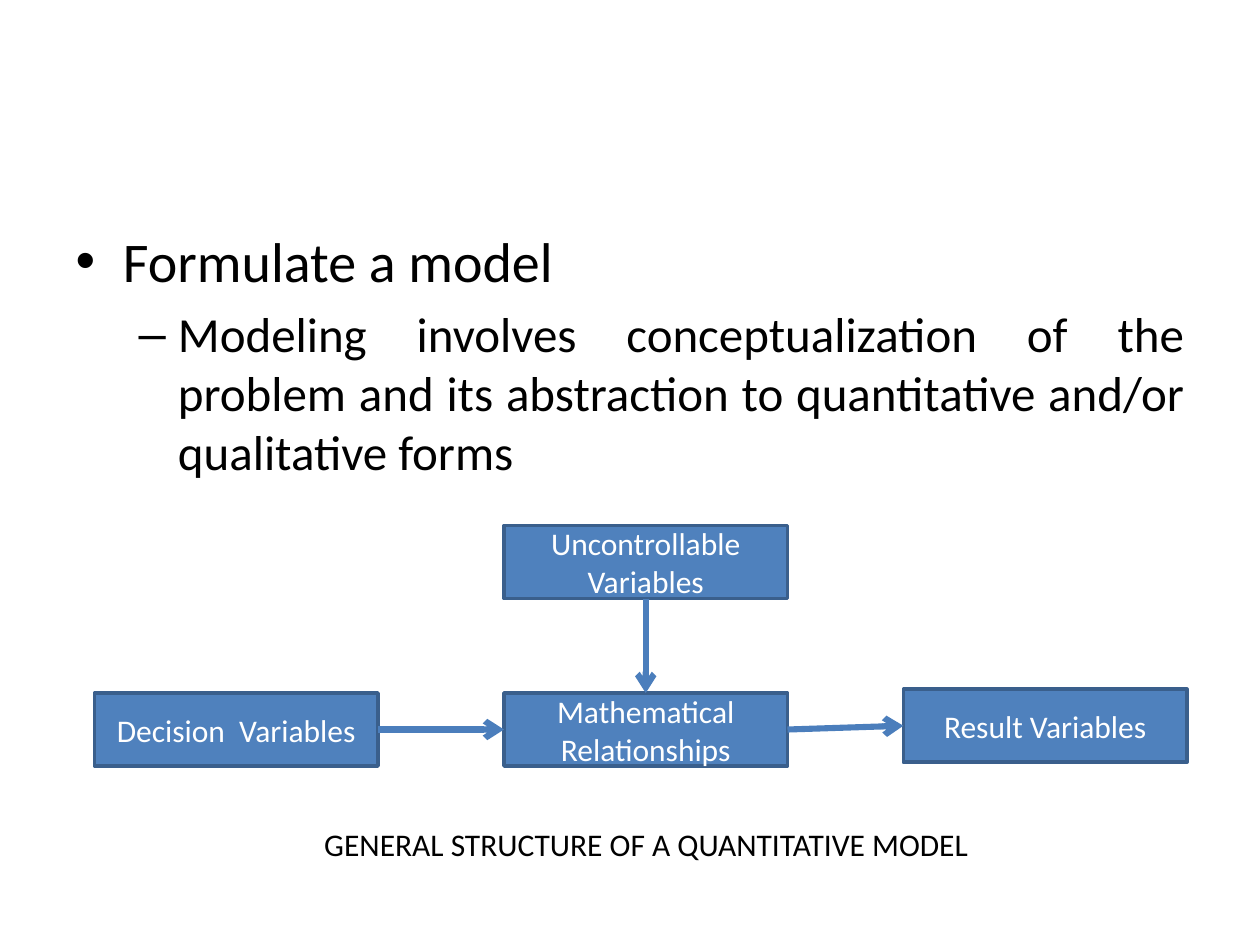
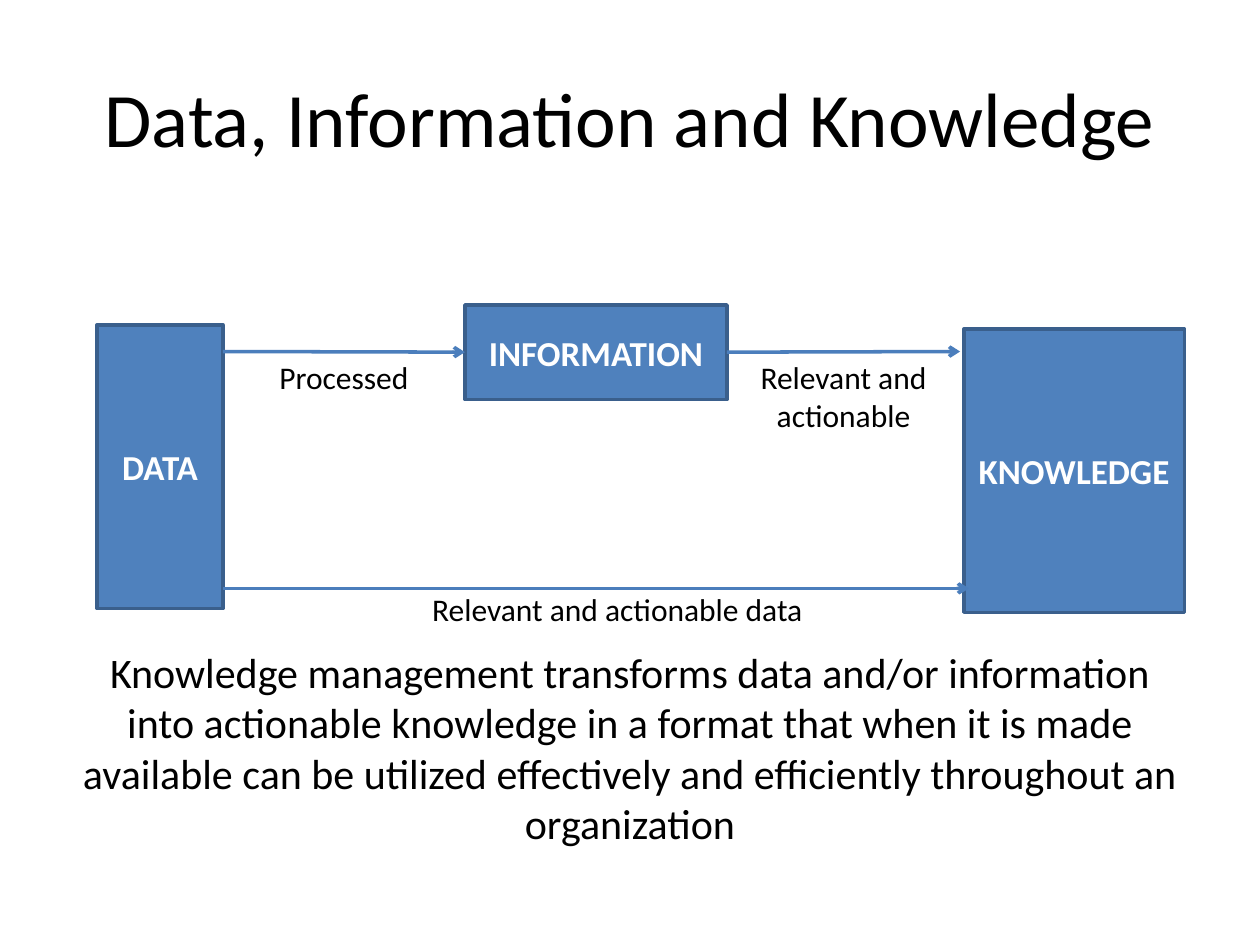
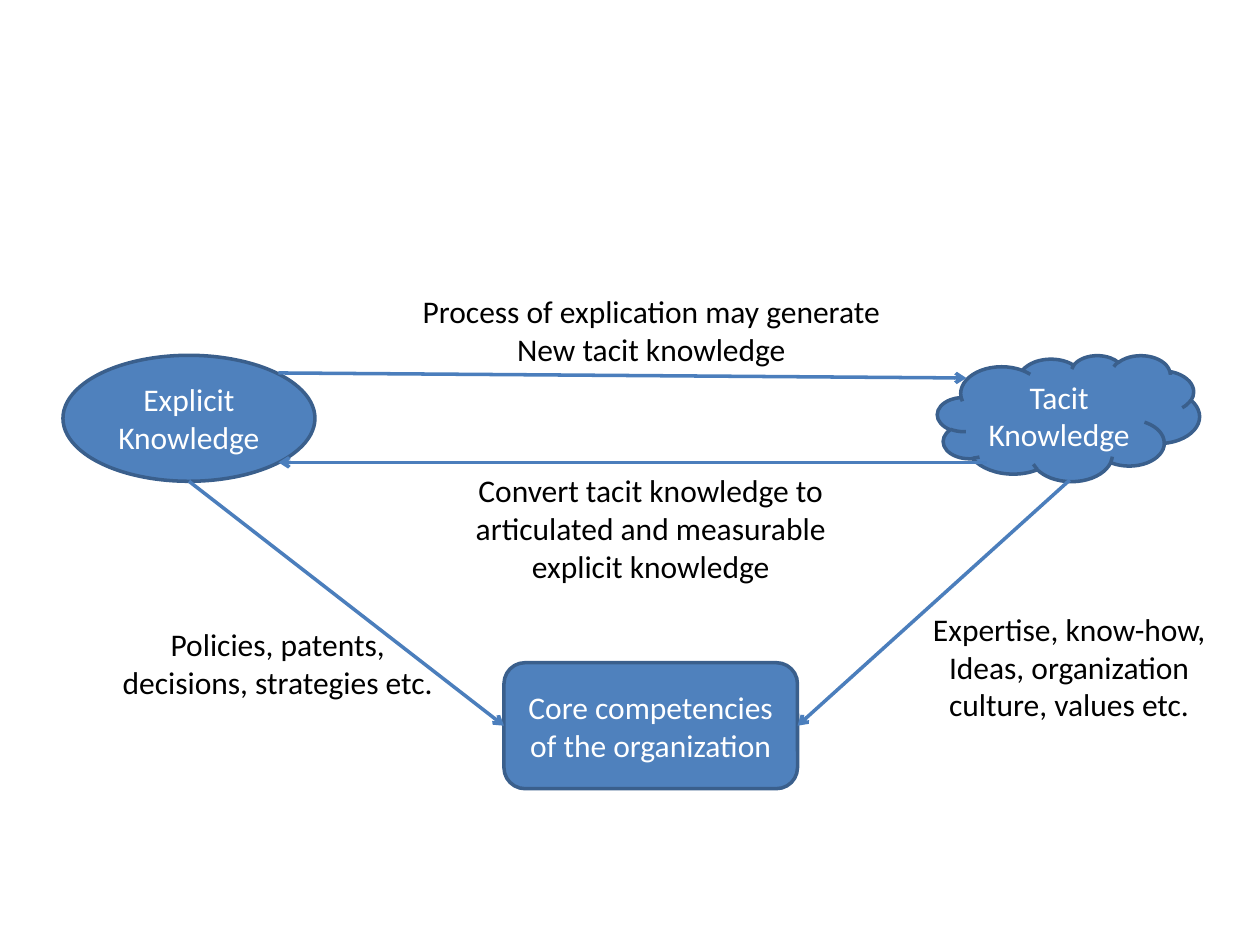
from pptx import Presentation
from pptx.dml.color import RGBColor
from pptx.enum.shapes import MSO_CONNECTOR, MSO_SHAPE
from pptx.enum.text import MSO_ANCHOR, MSO_AUTO_SIZE, PP_ALIGN
from pptx.oxml.ns import qn
from pptx.util import Inches, Pt
from lxml import etree

RECTANGLE, ROUNDED = MSO_SHAPE.RECTANGLE, MSO_SHAPE.ROUNDED_RECTANGLE
ELLIPSE, CLOUD = MSO_SHAPE.OVAL, MSO_SHAPE.CLOUD
STRAIGHT = MSO_CONNECTOR.STRAIGHT
CENTER, JUSTIFY = PP_ALIGN.CENTER, PP_ALIGN.JUSTIFY
MIDDLE = MSO_ANCHOR.MIDDLE
FIT_SHAPE = MSO_AUTO_SIZE.SHAPE_TO_FIT_TEXT
TOP, LEFT, BOTTOM, RIGHT = range(4)

FONT = "Calibri"
BLACK, WHITE = "000000", "FFFFFF"
BOX_FILL, BOX_LINE, ARROW_LINE = "4F81BD", "3A5F8C", "4B7EBC"
TITLE_TEXT = {"size": Pt(44)}
LABEL_TEXT = {"size": Pt(18)}
STRONG_TEXT = {"size": Pt(20), "bold": True}
SUMMARY_TEXT = {"size": Pt(24)}
LIST_TEXT = [{"size": Pt(32)}, {"size": Pt(28)}]


def paint(target, color):
    target.rgb = RGBColor.from_string(color)


def write(paragraph, text, color, alignment, formats):
    paragraph.alignment = alignment
    span = paragraph.add_run()
    span.text = text
    span.font.name = FONT
    paint(span.font.color, color)
    for name, value in formats.items():
        setattr(span.font, name, value)


deck = Presentation()
deck.slide_width, deck.slide_height = Inches(10), Inches(7.5)
list_layout, title_layout, blank_layout = (deck.slide_layouts[i] for i in (1, 5, 6))

model_page = deck.slides.add_slide(list_layout)
title = model_page.shapes.title
title.element.getparent().remove(title.element)
body = model_page.placeholders[1]
body.left, body.top, body.width, body.height = map(Inches, (0.5, 1.75, 9, 4.95))
steps = [
    "Formulate a model",
    "Modeling involves conceptualization of the problem and its abstraction "
    "to quantitative and/or qualitative forms",
]
for level, step in enumerate(steps):
    para = body.text_frame.add_paragraph() if level else body.text_frame.paragraphs[0]
    para.level = level
    if level == 0:
        para.space_before = Pt(0)
    write(para, step, BLACK, JUSTIFY, LIST_TEXT[level])

data_page = deck.slides.add_slide(title_layout)
title = data_page.shapes.title
title.left, title.top, title.width, title.height = map(Inches, (0.5, 0.3, 9, 1.25))
title.text_frame.vertical_anchor = MIDDLE
write(title.text_frame.paragraphs[0], "Data, Information and Knowledge",
      BLACK, CENTER, TITLE_TEXT)

knowledge_page = deck.slides.add_slide(blank_layout)

diagrams = [
    {
        "page": model_page, "box_text": LABEL_TEXT, "arrow_width": 3.5,
        "boxes": {
            "uncontrollable": (RECTANGLE, (4, 4.17, 2.25, 0.58), ["Uncontrollable Variables"]),
            "decision": (RECTANGLE, (0.75, 5.5, 2.25, 0.58), ["Decision  Variables"]),
            "relationships": (RECTANGLE, (4, 5.5, 2.25, 0.58), ["Mathematical Relationships"]),
            "result": (RECTANGLE, (7.17, 5.47, 2.25, 0.58), ["Result Variables"]),
        },
        "arrows": [
            ((5.12, 4.75, 5.12, 5.5), ("uncontrollable", BOTTOM), ("relationships", TOP)),
            ((3, 5.79, 4, 5.79), ("decision", RIGHT), ("relationships", LEFT)),
            ((6.25, 5.79, 7.17, 5.76), ("relationships", RIGHT), ("result", LEFT)),
        ],
        "labels": [
            ((2.45, 6.5, 5.36, 0.4), ["GENERAL STRUCTURE OF A QUANTITATIVE MODEL"]),
        ],
    },
    {
        "page": data_page, "box_text": STRONG_TEXT, "arrow_width": 2,
        "boxes": {
            "data": (RECTANGLE, (0.77, 2.58, 1, 2.25), ["DATA"]),
            "information": (RECTANGLE, (3.69, 2.42, 2.08, 0.75), ["INFORMATION"]),
            "knowledge": (RECTANGLE, (7.65, 2.61, 1.75, 2.25), ["KNOWLEDGE"]),
        },
        "arrows": [
            ((1.77, 2.79, 3.69, 2.79), None, ("information", LEFT)),
            ((5.77, 2.79, 7.62, 2.79), ("information", RIGHT), None),
            ((1.77, 4.67, 7.69, 4.67), None, None),
        ],
        "labels": [
            ((2.08, 2.79, 1.3, 0.4), ["Processed"]),
            ((5.93, 2.79, 1.53, 0.71), ["Relevant and", "actionable"]),
            ((3.31, 4.63, 3.18, 0.4), ["Relevant and actionable data"]),
        ],
    },
    {
        "page": knowledge_page, "box_text": LABEL_TEXT, "arrow_width": 2,
        "boxes": {
            "explicit": (ELLIPSE, (0.5, 2.82, 2, 1), ["Explicit", "Knowledge"]),
            "tacit": (CLOUD, (7.44, 2.82, 2.08, 1), ["Tacit", "Knowledge"]),
            "competencies": (ROUNDED, (4, 5.26, 2.33, 1),
                             ["Core competencies", "of the organization"]),
        },
        "arrows": [
            ((2.21, 2.96, 7.67, 3), None, None),
            ((7.83, 3.67, 2.21, 3.67), None, None),
            ((1.5, 3.82, 4, 5.76), None, ("competencies", LEFT)),
            ((8.49, 3.81, 6.33, 5.76), None, ("competencies", RIGHT)),
        ],
        "labels": [
            ((3.23, 2.27, 3.88, 0.71),
             ["Process of explication may generate", "New tacit knowledge"]),
            ((3.66, 3.69, 3.01, 1.01),
             ["Convert tacit knowledge to", "articulated and measurable", "explicit knowledge"]),
            ((0.86, 4.91, 2.69, 0.71), ["Policies, patents,", "decisions, strategies etc."]),
            ((7.29, 4.79, 2.39, 1.01),
             ["Expertise, know-how,", "Ideas, organization", "culture, values etc."]),
        ],
    },
]

for diagram in diagrams:
    shapes = diagram["page"].shapes
    texts = []
    boxes = {}
    for name, (kind, place, lines) in diagram["boxes"].items():
        box = shapes.add_shape(kind, *map(Inches, place))
        box.shadow.inherit = False
        box.fill.solid()
        paint(box.fill.fore_color, BOX_FILL)
        paint(box.line.color, BOX_LINE)
        box.line.width = Pt(2)
        box.text_frame.vertical_anchor = MIDDLE
        boxes[name] = box
        texts.append((box.text_frame, lines, WHITE, diagram["box_text"]))

    for ends, start, finish in diagram["arrows"]:
        arrow = shapes.add_connector(STRAIGHT, *map(Inches, ends))
        if start:
            arrow.begin_connect(boxes[start[0]], start[1])
        if finish:
            arrow.end_connect(boxes[finish[0]], finish[1])
        paint(arrow.line.color, ARROW_LINE)
        arrow.line.width = Pt(diagram["arrow_width"])
        etree.SubElement(arrow.line._get_or_add_ln(), qn("a:tailEnd"), type="arrow")
        etree.SubElement(arrow.element.spPr, qn("a:effectLst"))

    for place, lines in diagram["labels"]:
        label = shapes.add_textbox(*map(Inches, place))
        label.text_frame.word_wrap = False
        label.text_frame.auto_size = FIT_SHAPE
        texts.append((label.text_frame, lines, BLACK, LABEL_TEXT))

    for frame, lines, color, formats in texts:
        for i, line in enumerate(lines):
            para = frame.add_paragraph() if i else frame.paragraphs[0]
            write(para, line, color, CENTER, formats)

summary = data_page.shapes.add_textbox(*map(Inches, (0.5, 5.08, 9, 1.72)))
summary.text_frame.word_wrap = True
summary.text_frame.auto_size = FIT_SHAPE
write(summary.text_frame.paragraphs[0],
      "Knowledge management transforms data and/or information into actionable "
      "knowledge in a format that when it is made available can be utilized "
      "effectively and efficiently throughout an organization",
      BLACK, CENTER, SUMMARY_TEXT)

deck.save("out.pptx")
